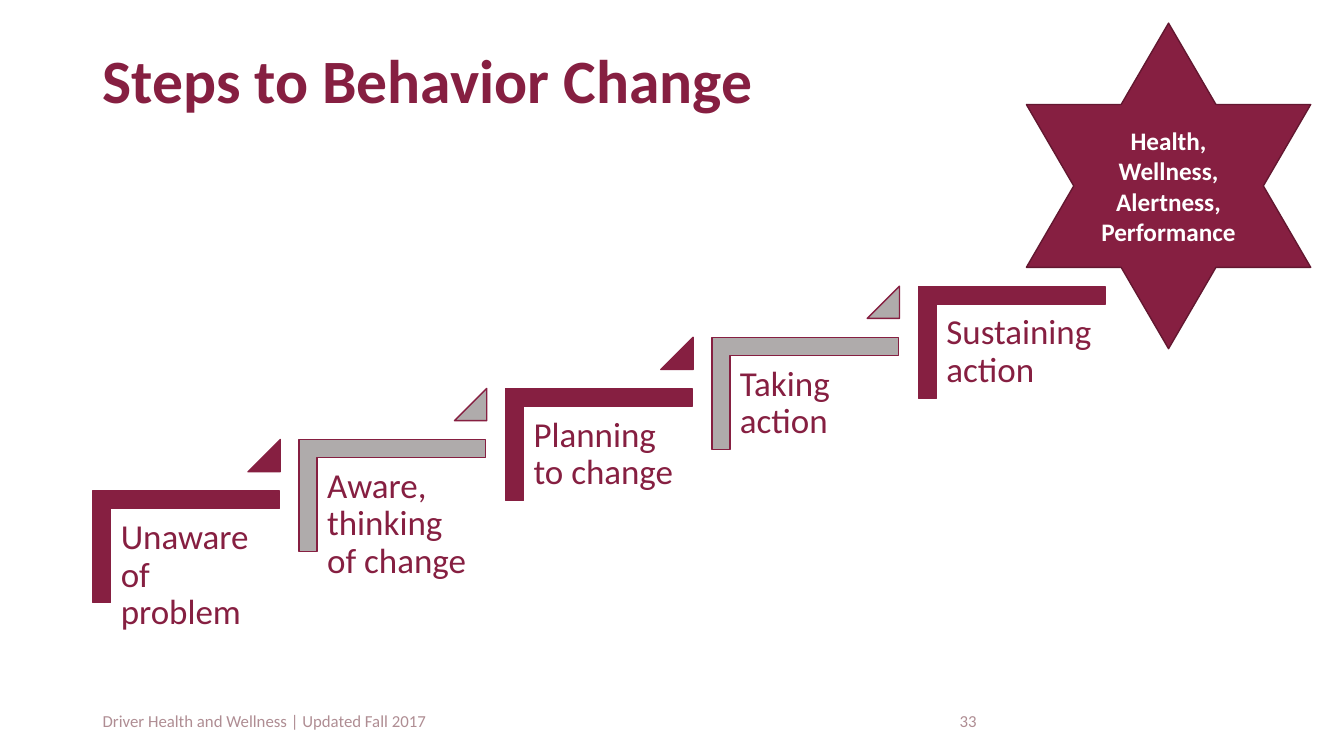
from pptx import Presentation
from pptx.dml.color import RGBColor
from pptx.enum.shapes import MSO_SHAPE as Shape
from pptx.enum.text import MSO_ANCHOR as Anchor, PP_ALIGN as Align
from pptx.util import Inches, Pt

COLORS = {"maroon": "861F41", "edge": "631730", "gray": "AFABAB",
          "muted": "AF8D93", "white": "FFFFFF"}


def write(shape, text, size, color="maroon", bold=False, align=Align.LEFT,
          anchor=Anchor.MIDDLE, spacing=1.0, after=0, inset=None):
    frame = shape.text_frame
    frame.word_wrap = True
    frame.vertical_anchor = anchor
    if inset is not None:
        frame.margin_left = frame.margin_right = Inches(inset)
        frame.margin_top = frame.margin_bottom = Inches(inset)
    para = frame.paragraphs[0]
    para.alignment = align
    para.line_spacing = spacing
    para.space_after = Pt(after)
    span = para.add_run()
    span.text = text
    span.font.name = "Calibri"
    span.font.size = Pt(size)
    span.font.bold = bold
    span.font.color.rgb = RGBColor.from_string(COLORS[color])


def add_figure(kind, left, top, width, height, fill, line="maroon"):
    shape = page.shapes.add_shape(kind, Inches(left), Inches(top),
                                  Inches(width), Inches(height))
    shape.shadow.inherit = False
    shape.fill.solid()
    shape.fill.fore_color.rgb = RGBColor.from_string(COLORS[fill])
    shape.line.color.rgb = RGBColor.from_string(COLORS[line])
    shape.line.width = Pt(1)
    return shape


deck = Presentation()
deck.slide_width, deck.slide_height = Inches(13.33), Inches(7.5)
page = deck.slides.add_slide(deck.slide_layouts[5])

# Title
title = page.shapes.title
title.left, title.top = Inches(0.92), Inches(0.1)
title.width, title.height = Inches(11.5), Inches(1.45)
write(title, "Steps to Behavior Change", 44, bold=True, spacing=0.9)

# Staircase: each step is further right and higher than the last
steps = ["Unaware of problem", "Aware, thinking of change",
         "Planning to change", "Taking action", "Sustaining action"]
STEP_RIGHT, STEP_UP = 2.047, 0.507

for index, label in enumerate(steps):
    right, up = index * STEP_RIGHT, index * STEP_UP
    fill = "gray" if index % 2 else "maroon"

    corner = add_figure(Shape.CORNER, 1.29 + right, 4.5 - up, 1.11, 1.85, fill)
    corner.rotation = 90
    corner.adjustments[0] = corner.adjustments[1] = 0.16

    box = page.shapes.add_textbox(Inches(1.1 + right), Inches(5.05 - up),
                                  Inches(1.67), Inches(1.47))
    write(box, label, 25, anchor=Anchor.TOP, spacing=0.9, after=9, inset=0.1)

    if index < len(steps) - 1:
        triangle = add_figure(Shape.ISOSCELES_TRIANGLE, 2.46 + right,
                              4.36 - up, 0.32, 0.32, fill)
        triangle.adjustments[0] = 1

# Footer and page number
for text, left, width in [
        ("Driver Health and Wellness | Updated Fall 2017", 0.92, 3.76),
        ("33", 9.42, 2.07)]:
    box = page.shapes.add_textbox(Inches(left), Inches(6.95),
                                  Inches(width), Inches(0.4))
    write(box, text, 12, color="muted")

# Goal star
star = add_figure(Shape.STAR_6_POINT, 10.18, 0.23, 2.82, 3.23, "maroon", "edge")
write(star, "Health, Wellness, Alertness, Performance", 18, color="white",
      bold=True, align=Align.CENTER)

deck.save("out.pptx")
